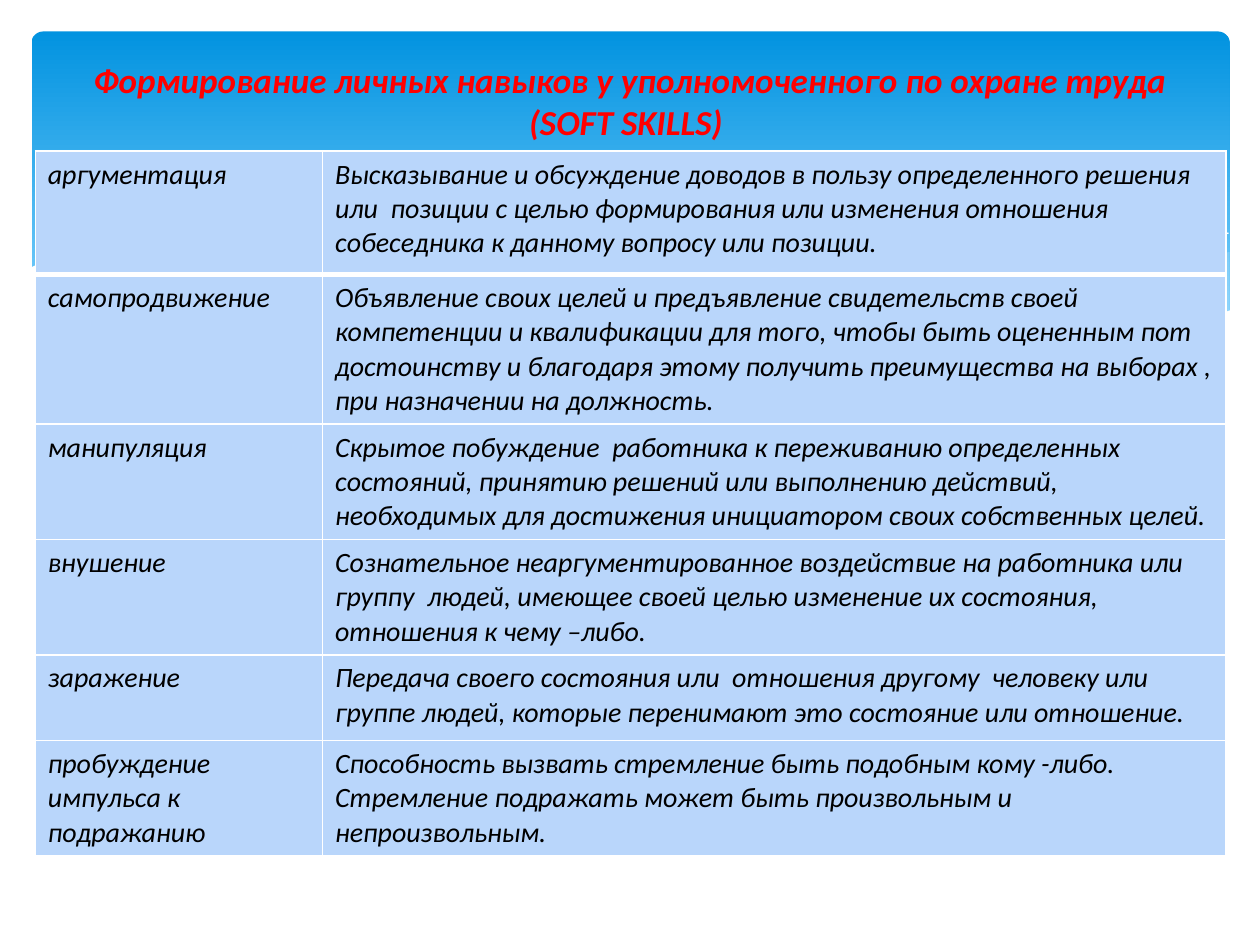
from lxml import etree
from pptx import Presentation, util as u
from pptx.dml.color import RGBColor
from pptx.enum import shapes, text
from pptx.oxml.ns import qn

COLORS = {"top": "0293E0", "bottom": "83D3FE", "wave": "C6E7FC", "white": "FFFFFF",
          "title": "FF0000", "cell": "B9D6FB", "text": "000000"}
TITLE = "Формирование личных навыков у уполномоченного по охране труда (SOFT SKILLS) "
ROWS = [
    ("аргументация", "Высказывание и обсуждение доводов в пользу определенного решения или  позиции с целью "
     "формирования или изменения отношения собеседника к данному вопросу или позиции."),
    ("самопродвижение", "Объявление своих целей и предъявление свидетельств своей компетенции и квалификации "
     "для того, чтобы быть оцененным пот достоинству и благодаря этому получить преимущества на выборах , "
     "при назначении на должность."),
    ("манипуляция", "Скрытое побуждение  работника к переживанию определенных состояний, принятию решений "
     "или выполнению действий, необходимых для достижения инициатором своих собственных целей."),
    ("внушение", "Сознательное неаргументированное воздействие на работника или группу  людей, имеющее "
     "своей целью изменение их состояния, отношения к чему –либо."),
    ("заражение", "Передача своего состояния или  отношения другому  человеку или группе людей, которые "
     "перенимают это состояние или отношение."),
    ("пробуждение импульса к подражанию", "Способность вызвать стремление быть подобным кому -либо. "
     "Стремление подражать может быть произвольным и непроизвольным."),
]
COLUMN_WIDTHS = (2.28, 7.17)
ROW_HEIGHTS = [0.98] + [0.68] * (len(ROWS) - 1)

WAVES = [
    {"fill": "wave", "alpha": 29, "points": [
        (9.76, 2), (9.48, 2.04), (9.06, 2.13), (8.61, 2.23), (7.79, 2.42), (7.06, 2.57), (6.61, 2.65),
        (7.05, 2.71), (7.57, 2.76), (8.03, 2.78), (8.54, 2.76), (8.97, 2.7), (9.42, 2.59), (9.76, 2.47)]},
    {"fill": "wave", "alpha": 40, "points": [
        (8.93, 2.73), (8.37, 2.65), (7.75, 2.54), (7.06, 2.4), (6.29, 2.22), (5.69, 2.08), (5.14, 1.98),
        (4.65, 1.91), (4.2, 1.87), (3.8, 1.85), (3.28, 1.87), (2.86, 1.91), (3.42, 1.99), (4.04, 2.11),
        (4.91, 2.32), (5.66, 2.48), (6.34, 2.61), (6.95, 2.7), (7.48, 2.76), (8.07, 2.78), (8.57, 2.77)]},
    {"line": "white", "points": [
        (3.09, 1.95), (3.44, 1.9), (3.87, 1.87), (4.33, 1.87), (4.89, 1.9), (5.56, 1.97), (6.36, 2.08),
        (7.27, 2.26), (8.31, 2.51), (9.07, 2.72)]},
    {"line": "white", "points": [
        (6.13, 2.57), (6.72, 2.41), (7.48, 2.23), (8.36, 2.04), (8.95, 1.94), (9.38, 1.88), (9.75, 1.85)]},
    {"fill": "white", "points": [
        (9.77, 2.46), (9.5, 2.56), (9.1, 2.67), (8.63, 2.74), (8.09, 2.77), (7.44, 2.74), (6.68, 2.65),
        (5.79, 2.5), (5.03, 2.33), (4.47, 2.2), (3.91, 2.07), (3.4, 1.97), (2.92, 1.9), (2.5, 1.86),
        (1.93, 1.84), (1.46, 1.85), (1.06, 1.89), (0.67, 1.97), (0.4, 2.05), (0.23, 2.13),
        (0.23, 3.29), (9.77, 3.29)]},
]


def color(name):
    return RGBColor.from_string(COLORS[name])


def box(*lengths):
    return [u.Inches(length) for length in lengths]


def set_font(paragraph, color_name, **values):
    for name, value in {"name": "Calibri", "italic": True, **values}.items():
        setattr(paragraph.font, name, value)
    paragraph.font.color.rgb = color(color_name)


def add_wave(slide, points, fill=None, line=None, alpha=100):
    corners = [box(*point) for point in points]
    builder = slide.shapes.build_freeform(*corners[0])
    builder.add_line_segments(corners[1:], close=fill is not None)
    shape = builder.convert_to_shape()
    shape.shadow.inherit = False
    if fill:
        shape.fill.solid()
        shape.fill.fore_color.rgb = color(fill)
        shape.line.fill.background()
        if alpha < 100:
            value = shape._element.spPr.find(".//" + qn("a:srgbClr"))
            etree.SubElement(value, qn("a:alpha"), val=str(alpha * 1000))
    else:
        shape.fill.background()
        shape.line.color.rgb = color(line)
        shape.line.width = u.Pt(0)


def add_band(slide):
    band = slide.shapes.add_shape(shapes.MSO_SHAPE.ROUNDED_RECTANGLE, *box(0.25, 0.25, 9.51, 2.7))
    band.adjustments[0] = 0.034
    band.shadow.inherit = False
    band.line.fill.background()
    band.fill.gradient()
    band.fill.gradient_angle = 270
    for stop, name, position in zip(band.fill.gradient_stops, ("top", "bottom"), (0, 0.9)):
        stop.color.rgb = color(name)
        stop.position = position


def add_borders(cell, bottom):
    properties = cell._tc.get_or_add_tcPr()
    for side, points in (("L", 1), ("R", 1), ("T", 1), ("B", bottom)):
        line = etree.SubElement(properties, qn("a:ln" + side), w=str(u.Pt(points)))
        fill = etree.SubElement(line, qn("a:solidFill"))
        etree.SubElement(fill, qn("a:srgbClr"), val=COLORS["white"])


def add_skills_table(slide):
    table = slide.shapes.add_table(len(ROWS), len(COLUMN_WIDTHS), *box(
        0.28, 1.2, sum(COLUMN_WIDTHS), sum(ROW_HEIGHTS))).table
    for column, width in zip(table.columns, COLUMN_WIDTHS):
        column.width = u.Inches(width)
    for index, (row, height) in enumerate(zip(table.rows, ROW_HEIGHTS)):
        row.height = u.Inches(height)
        for cell, words in zip(row.cells, ROWS[index]):
            add_borders(cell, 3 if index == 0 else 1)
            cell.fill.solid()
            cell.fill.fore_color.rgb = color("cell")
            cell.text = words
            set_font(cell.text_frame.paragraphs[0], "text", size=u.Pt(16), bold=False)


def main():
    presentation = Presentation()
    presentation.slide_width, presentation.slide_height = box(10, 7.5)
    slide = presentation.slides.add_slide(presentation.slide_layouts[5])
    add_band(slide)
    for wave in WAVES:
        add_wave(slide, **wave)
    title = slide.shapes.title
    slide.shapes._spTree.append(title._element)
    title.left, title.top, title.width, title.height = box(0.5, 0.37, 9, 0.86)
    title.text_frame.text = TITLE
    title.text_frame.vertical_anchor = text.MSO_ANCHOR.MIDDLE
    paragraph = title.text_frame.paragraphs[0]
    paragraph.alignment = text.PP_ALIGN.CENTER
    set_font(paragraph, "title", size=u.Pt(20), bold=True)
    add_skills_table(slide)
    presentation.save("out.pptx")


if __name__ == "__main__":
    main()
